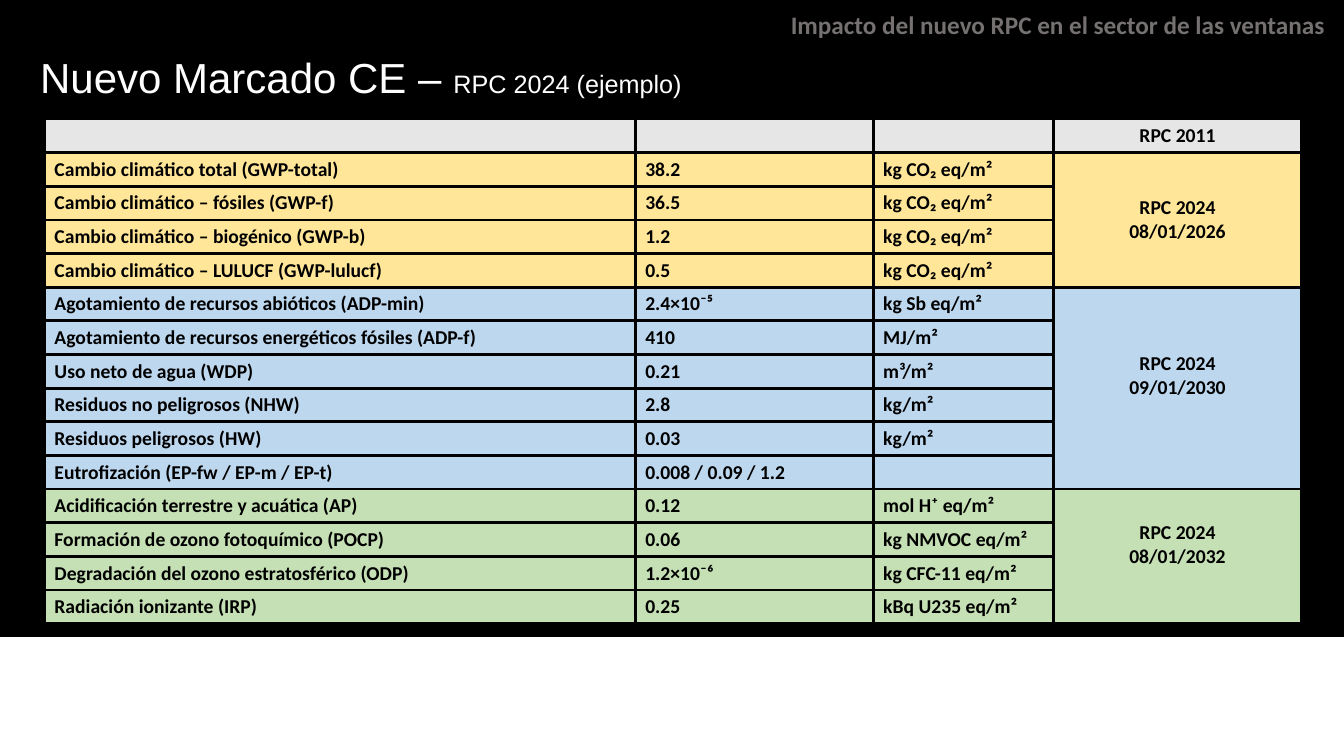
from dataclasses import dataclass

from lxml import etree
from pptx import Presentation
from pptx import util as u
from pptx.dml.color import RGBColor
from pptx.enum import shapes, text
from pptx.oxml import ns


@dataclass(frozen=True)
class Theme:
    """Colours, fonts and type sizes of the slide."""

    black: str = "000000"
    white: str = "FFFFFF"
    gray: str = "767171"
    head: str = "E7E6E6"
    gold: str = "FFE699"
    blue: str = "BDD7EE"
    green: str = "C5E0B4"
    body: str = "Calibri"
    title: str = "Arial"
    large: int = 30
    mid: int = 18
    small: int = 14
    rule: float = 2.25


THEME = Theme()
COLS = (5.86, 2.36, 1.79, 2.46)
ROW = 0.33
GROUPS = (
    (THEME.gold, "08/01/2026", 0.05, (
        ("Cambio climático total (GWP-total)", "38.2", "kg CO₂ eq/m²"),
        ("Cambio climático – fósiles (GWP-f)", "36.5", "kg CO₂ eq/m²"),
        ("Cambio climático – biogénico (GWP-b)", "1.2", "kg CO₂ eq/m²"),
        ("Cambio climático – LULUCF (GWP-lulucf)", "0.5", "kg CO₂ eq/m²"),
    )),
    (THEME.blue, "09/01/2030", 0.29, (
        ("Agotamiento de recursos abióticos (ADP-min)", "2.4×10⁻⁵", "kg Sb eq/m²"),
        ("Agotamiento de recursos energéticos fósiles (ADP-f)", "410", "MJ/m²"),
        ("Uso neto de agua (WDP)", "0.21", "m³/m²"),
        ("Residuos no peligrosos (NHW)", "2.8", "kg/m²"),
        ("Residuos peligrosos (HW)", "0.03", "kg/m²"),
        ("Eutrofización (EP-fw / EP-m / EP-t)", "0.008 / 0.09 / 1.2", ""),
    )),
    (THEME.green, "08/01/2032", 0.29, (
        ("Acidificación terrestre y acuática (AP)", "0.12", "mol H⁺ eq/m²"),
        ("Formación de ozono fotoquímico (POCP)", "0.06", "kg NMVOC eq/m²"),
        ("Degradación del ozono estratosférico (ODP)", "1.2×10⁻⁶", "kg CFC-11 eq/m²"),
        ("Radiación ionizante (IRP)", "0.25", "kBq U235 eq/m²"),
    )),
)


def write(para, words, size=THEME.small, face=THEME.body, color=THEME.black,
          bold=True, align=None):
    """Add formatted words to a paragraph, or size it when empty."""
    if align is not None:
        para.alignment = align
    if not words:
        para._p.get_or_add_endParaRPr().set("sz", str(size * 100))
        return
    run = para.add_run()
    run.text = words
    font = run.font
    font.size, font.name, font.bold = u.Pt(size), face, bold
    font.color.rgb = RGBColor.from_string(color)


def label(slide, left, top, width, height):
    """Add a wrapping text box and return its first paragraph."""
    box = slide.shapes.add_textbox(*map(u.Inches, (left, top, width, height)))
    box.text_frame.word_wrap = True
    return box.text_frame.paragraphs[0]


def panel(slide):
    """Draw the dark panel behind the content."""
    rect = slide.shapes.add_shape(
        shapes.MSO_SHAPE.RECTANGLE, 0, 0, u.Inches(13.33), u.Inches(6.31))
    rect.shadow.inherit = False
    rect.fill.solid()
    rect.fill.fore_color.rgb = RGBColor.from_string(THEME.black)
    rect.line.color.rgb = RGBColor.from_string(THEME.black)
    rect.line.width = u.Pt(1)


def paint(cell, color):
    """Give a cell its borders and fill."""
    props = cell._tc.get_or_add_tcPr()
    for side in ("lnL", "lnR", "lnT", "lnB"):
        line = etree.SubElement(props, ns.qn(f"a:{side}"), w=str(u.Pt(THEME.rule)))
        fill = etree.SubElement(line, ns.qn("a:solidFill"))
        etree.SubElement(fill, ns.qn("a:srgbClr"), val=THEME.black)
    cell.fill.solid()
    cell.fill.fore_color.rgb = RGBColor.from_string(color)


def fill_row(table, row, words, color):
    """Paint a row and write its words from the left."""
    for col in range(len(COLS)):
        cell = table.cell(row, col)
        paint(cell, color)
        item = words[col] if col < len(words) else ""
        write(cell.text_frame.paragraphs[0], item)


def center(cell, lines):
    """Write centred lines in the middle of a cell."""
    cell.vertical_anchor = text.MSO_ANCHOR.MIDDLE
    frame = cell.text_frame
    for num, words in enumerate(lines):
        para = frame.add_paragraph() if num else frame.paragraphs[0]
        write(para, words, align=text.PP_ALIGN.CENTER)


def grid(slide):
    """Build the table of indicators, grouped by date."""
    count = 1 + sum(len(group[3]) for group in GROUPS)
    frame = slide.shapes.add_table(
        count, len(COLS), u.Inches(0.44), u.Inches(1.18),
        u.Inches(sum(COLS)), u.Inches(ROW * count))
    table = frame.table
    for col, width in zip(table.columns, COLS):
        col.width = u.Inches(width)
    for row in table.rows:
        row.height = u.Inches(ROW)
    last = len(COLS) - 1
    fill_row(table, 0, (), THEME.head)
    center(table.cell(0, last), ("RPC 2011",))
    top = 1
    for color, date, pad, rows in GROUPS:
        for step, words in enumerate(rows):
            fill_row(table, top + step, words, color)
        cell = table.cell(top, last)
        cell.merge(table.cell(top + len(rows) - 1, last))
        cell.margin_bottom = u.Inches(pad)
        center(cell, ("RPC 2024", date))
        top += len(rows)


def main():
    """Build the slide and save it."""
    deck = Presentation()
    deck.slide_width, deck.slide_height = u.Inches(13.33), u.Inches(7.5)
    slide = deck.slides.add_slide(deck.slide_layouts[6])
    panel(slide)
    write(label(slide, 3.88, 0.04, 9.36, 0.4),
          "Impacto del nuevo RPC en el sector de las ventanas",
          size=THEME.mid, color=THEME.gray, align=text.PP_ALIGN.RIGHT)
    title = label(slide, 0.3, 0.52, 12.67, 0.78)
    title.line_spacing = 0.9
    for words, size in (("Nuevo Marcado CE – ", THEME.large),
                        ("RPC 2024 (ejemplo)", THEME.mid)):
        write(title, words, size=size, face=THEME.title,
              color=THEME.white, bold=False)
    grid(slide)
    deck.save("out.pptx")


if __name__ == "__main__":
    main()
